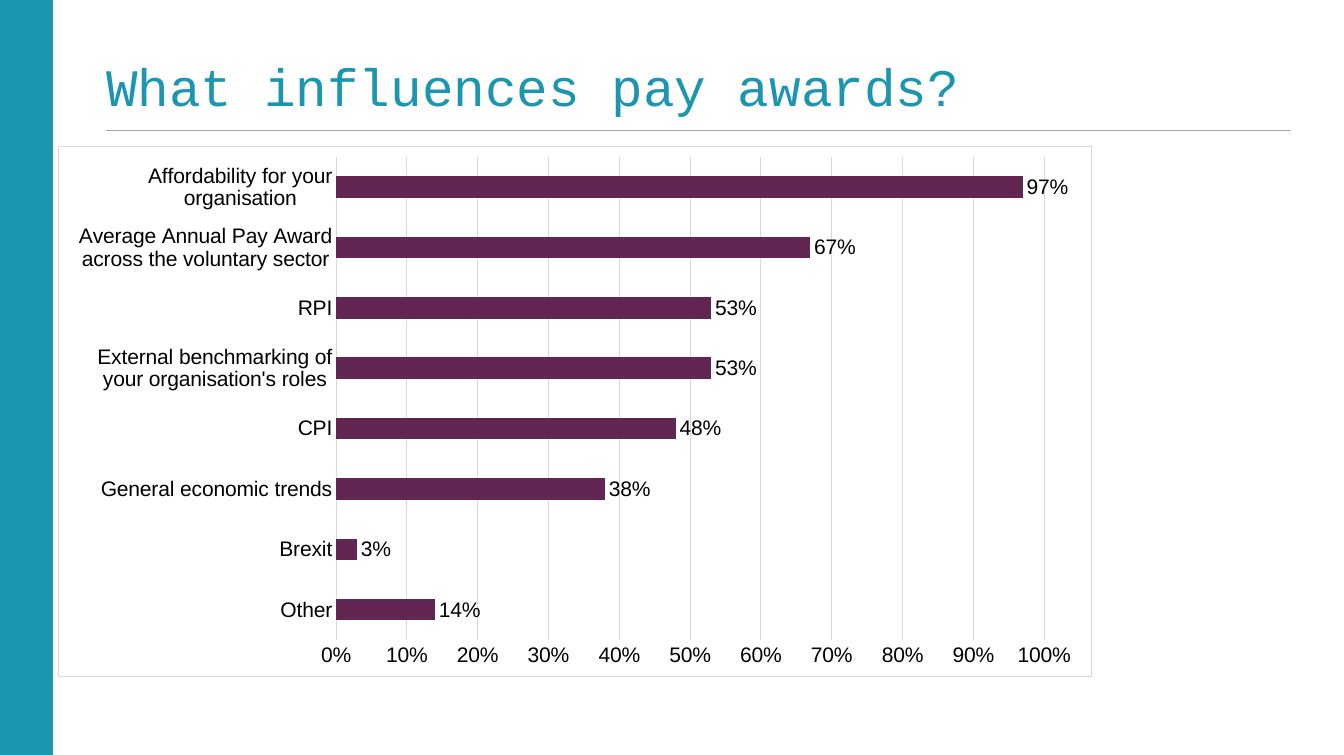
from lxml import etree
from pptx import Presentation
from pptx.chart.data import CategoryChartData
from pptx.dml.color import RGBColor
from pptx.enum.chart import XL_CHART_TYPE as ChartType
from pptx.enum.chart import XL_LABEL_POSITION as LabelPosition
from pptx.enum.chart import XL_TICK_MARK as TickMark
from pptx.enum.shapes import MSO_CONNECTOR as Connector
from pptx.enum.shapes import MSO_SHAPE as Shape
from pptx.enum.text import MSO_ANCHOR as Anchor
from pptx.enum.text import MSO_AUTO_SIZE as AutoSize
from pptx.enum.text import PP_ALIGN as Align
from pptx.oxml import parse_xml
from pptx.oxml.ns import nsdecls, qn
from pptx.util import Inches, Pt

WIDTH, HEIGHT = Inches(14.18), Inches(7.97)
COLORS = {
    "teal": "1C95B1",
    "rule": "A3A4A6",
    "bar": "612652",
    "grid": "D9D9D9",
    "text": "000000",
    "paper": "FFFFFF",
}
INFLUENCES = {
    "Other": 0.14,
    "Brexit": 0.03,
    "General economic trends": 0.38,
    "CPI": 0.48,
    "External benchmarking of your organisation's roles": 0.53,
    "RPI": 0.53,
    "Average Annual Pay Award across the voluntary sector": 0.67,
    "Affordability for your organisation": 0.97,
}


def color(key):
    return RGBColor.from_string(COLORS[key])


def style_line(line, key, width):
    line.color.rgb = color(key)
    line.width = Pt(width)


def add_side_band(slide, box):
    band = slide.shapes.add_shape(Shape.RECTANGLE, *box)
    band.shadow.inherit = False
    band.fill.solid()
    band.fill.fore_color.rgb = color("teal")
    band.line.fill.background()


def add_heading(slide, box, wording):
    """Title at the top of the box, rule along its bottom edge."""
    left, top, width, height = box
    title = slide.shapes.title
    title.left, title.top = left, top
    title.width, title.height = width, int(height * 0.8)
    frame = title.text_frame
    frame.margin_left = frame.margin_right = 0
    frame.margin_top = frame.margin_bottom = 0
    frame.word_wrap = True
    frame.auto_size = AutoSize.NONE
    frame.vertical_anchor = Anchor.BOTTOM
    frame.text = wording
    heading = frame.paragraphs[0]
    heading.alignment = Align.LEFT
    heading.line_spacing = 0.8
    heading.font.name = "Courier New"
    heading.font.size = Pt(40)
    heading.font.color.rgb = color("teal")

    bottom = top + height
    rule = slide.shapes.add_connector(
        Connector.STRAIGHT, left, bottom, left + width, bottom)
    style_line(rule.line, "rule", 1)
    etree.SubElement(rule._element.spPr, qn("a:effectLst"))


def frame_chart(chart):
    """Fill and outline the whole chart area."""
    area = parse_xml(
        f'<c:spPr {nsdecls("c", "a")}>'
        f'<a:solidFill><a:srgbClr val="{COLORS["paper"]}"/></a:solidFill>'
        f'<a:ln w="{Pt(0.75)}"><a:solidFill>'
        f'<a:srgbClr val="{COLORS["grid"]}"/></a:solidFill></a:ln></c:spPr>')
    chart._chartSpace.find(qn("c:chart")).addnext(area)


def add_influence_chart(slide, box, influences):
    data = CategoryChartData(number_format="0%")
    data.categories = list(influences)
    data.add_series("Series 1", list(influences.values()))
    chart = slide.shapes.add_chart(ChartType.BAR_CLUSTERED, *box, data).chart
    chart.has_title = False
    chart.has_legend = False
    chart.font.name = "Arial"
    chart.font.size = Pt(16)
    chart.font.color.rgb = color("text")
    frame_chart(chart)

    reasons, shares = chart.category_axis, chart.value_axis
    for axis in (reasons, shares):
        axis.major_tick_mark = axis.minor_tick_mark = TickMark.NONE
    style_line(reasons.format.line, "grid", 0.75)
    reasons.has_major_gridlines = False

    shares.minimum_scale, shares.maximum_scale = 0, 1
    shares.major_unit = 0.1
    shares.format.line.fill.background()
    shares.has_major_gridlines = True
    style_line(shares.major_gridlines.format.line, "grid", 0.75)
    shares.tick_labels.number_format = "0%"
    shares.tick_labels.number_format_is_linked = False

    plot = chart.plots[0]
    plot.gap_width = 182
    plot.vary_by_categories = False
    bars = plot.series[0]
    bars.format.fill.solid()
    bars.format.fill.fore_color.rgb = color("bar")
    labels = bars.data_labels
    labels.show_value = True
    labels.position = LabelPosition.OUTSIDE_END
    labels.number_format = "0%"
    labels.number_format_is_linked = False


def main():
    deck = Presentation()
    deck.slide_width, deck.slide_height = WIDTH, HEIGHT
    slide = deck.slides.add_slide(deck.slide_layouts[5])  # title only

    band_width = Inches(0.56)
    margin = 2 * band_width
    add_side_band(slide, (0, 0, band_width, HEIGHT))
    add_heading(
        slide,
        (margin, Inches(0.64), WIDTH - margin - band_width, Inches(0.74)),
        "What influences pay awards?")
    add_influence_chart(
        slide,
        (Inches(0.61), Inches(1.54), Inches(10.91), Inches(5.61)),
        INFLUENCES)
    deck.save("out.pptx")


if __name__ == "__main__":
    main()
